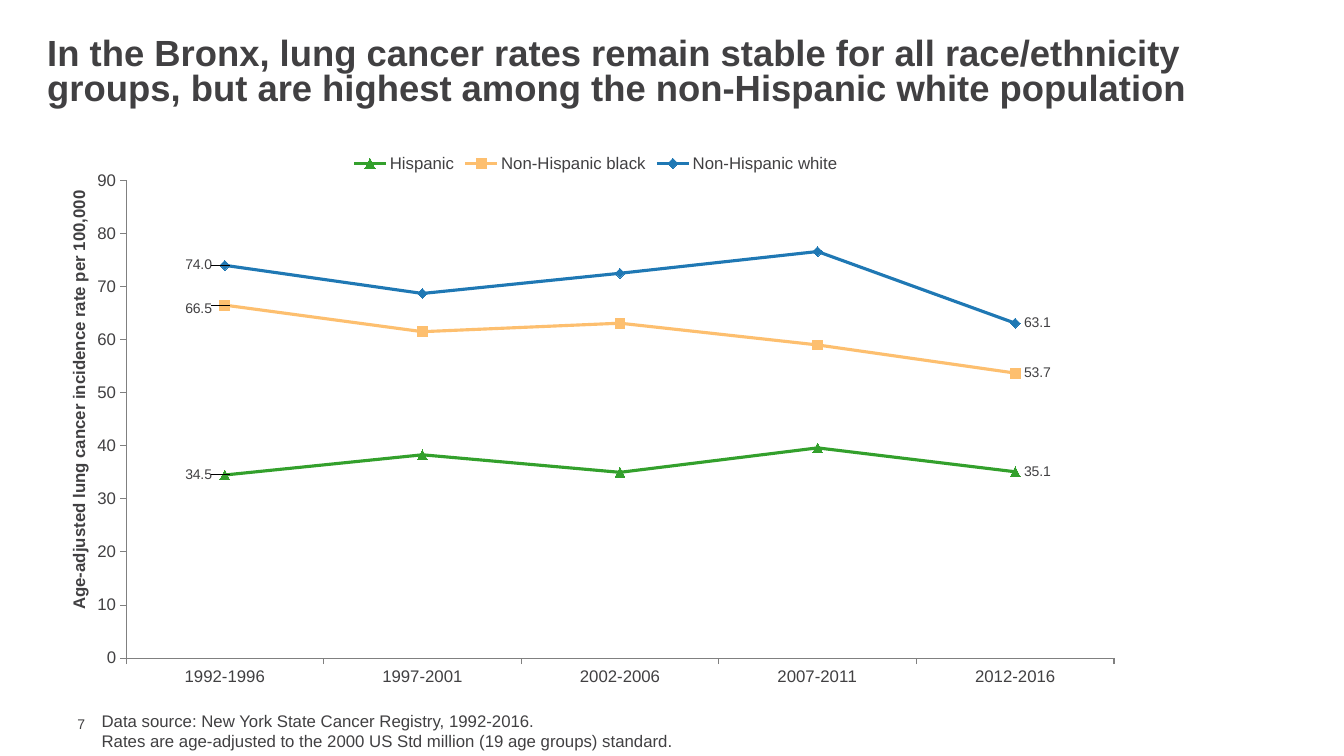
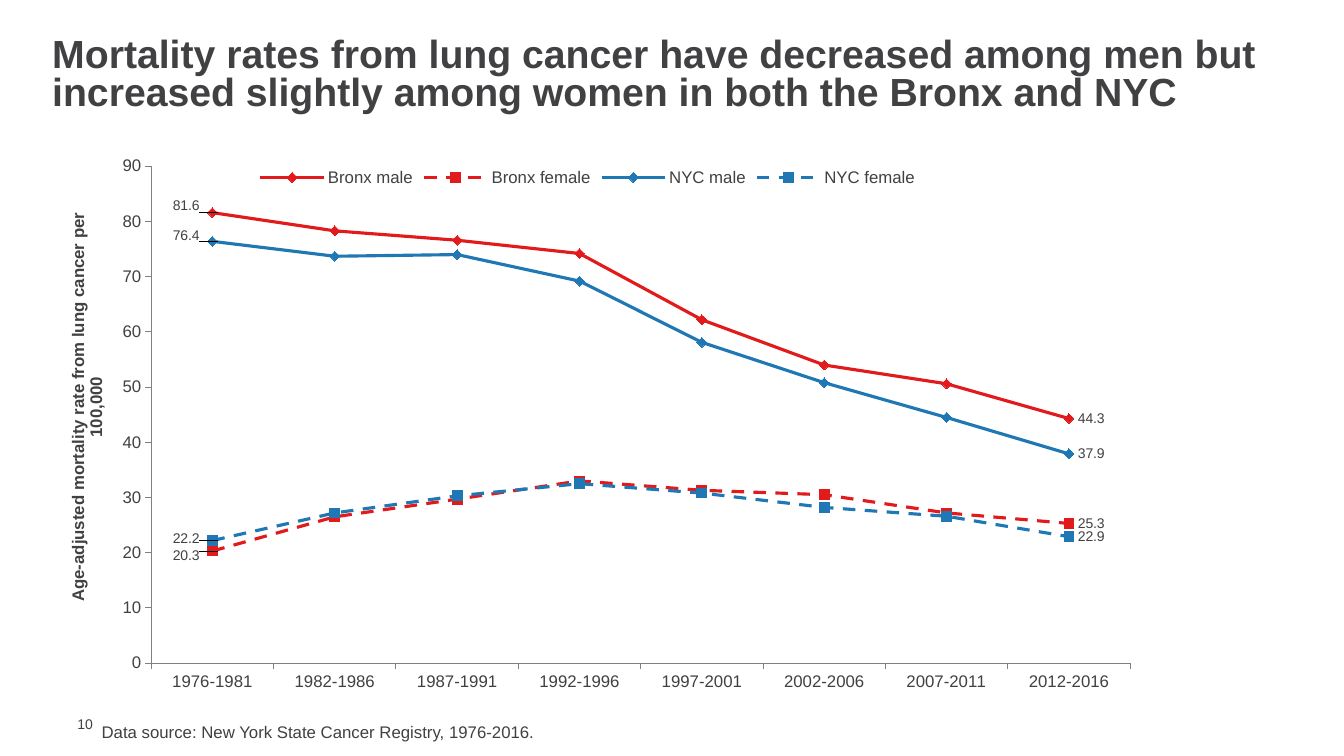
from lxml import etree
from pptx import Presentation
from pptx import util as u
from pptx.chart.data import CategoryChartData
from pptx.dml.color import RGBColor
from pptx.enum import chart as charts, dml, text
from pptx.oxml import parse_xml
from pptx.oxml.ns import nsdecls, qn

FONT = "Arial"
INK = "414042"
AXIS_GREY = "808080"
GREEN, ORANGE, BLUE, RED = "33A02C", "FDBF6F", "1F78B4", "E31A1C"
CHART_WIDTH, CHART_HEIGHT = 11, 5.58
FIRST_LABEL_SHIFT = -0.48
DIAMOND = charts.XL_MARKER_STYLE.DIAMOND
SQUARE = charts.XL_MARKER_STYLE.SQUARE
TRIANGLE = charts.XL_MARKER_STYLE.TRIANGLE
LEADER_LINES = (
    f'<c:extLst {nsdecls("c")}><c:ext uri="{{CE6537A1-D6FC-4f65-9D91-7224C49458BB}}" '
    'xmlns:c15="http://schemas.microsoft.com/office/drawing/2012/chart">'
    '<c15:showLeaderLines val="1"/></c:ext></c:extLst>')


def color(hex_code):
    return RGBColor.from_string(hex_code)


def style_font(font, size, bold=False):
    font.name, font.size, font.bold = FONT, u.Pt(size), bold
    font.color.rgb = color(INK)


def add_text(slide, place, lines, size, bold=False, spacing=None, middle=False):
    box = slide.shapes.add_textbox(*map(u.Inches, place))
    frame = box.text_frame
    frame.word_wrap = True
    if middle:
        frame.vertical_anchor = text.MSO_ANCHOR.MIDDLE
    for index, line in enumerate(lines):
        para = frame.add_paragraph() if index else frame.paragraphs[0]
        para.text = line
        style_font(para.font, size, bold)
        if spacing:
            para.line_spacing = spacing
    return frame


def add_page(deck, title, title_place, title_size, number, source, source_place):
    slide = deck.slides.add_slide(deck.slide_layouts[6])
    number_frame = add_text(slide, (0.67, 7.1, 0.43, 0.17), [number], 10, middle=True)
    number_frame.margin_top = number_frame.margin_right = number_frame.margin_bottom = 0
    add_text(slide, source_place, source, 12)
    add_text(slide, title_place, [title], title_size, True, 0.8, True)
    return slide


def set_layout(parent, index, left, top, size=None):
    """Place a chart part by hand; lengths are inches within the chart."""
    for old in parent.findall(qn("c:layout")):
        parent.remove(old)
    layout = etree.Element(qn("c:layout"))
    manual = etree.SubElement(layout, qn("c:manualLayout"))
    settings = []
    if size:
        settings.append(("layoutTarget", "inner"))
    if parent.tag != qn("c:dLbl"):
        settings += [("xMode", "edge"), ("yMode", "edge")]
    settings += [("x", left / CHART_WIDTH), ("y", top / CHART_HEIGHT)]
    if size:
        settings += [("w", size[0] / CHART_WIDTH), ("h", size[1] / CHART_HEIGHT)]
    for name, value in settings:
        etree.SubElement(manual, qn(f"c:{name}")).set("val", str(value))
    parent.insert(index, layout)


def style_axis(axis):
    axis.has_major_gridlines = False
    axis.major_tick_mark = charts.XL_TICK_MARK.OUTSIDE
    axis.minor_tick_mark = charts.XL_TICK_MARK.NONE
    style_font(axis.tick_labels.font, 12)
    axis.format.line.color.rgb = color(AXIS_GREY)
    axis.format.line.width = u.Pt(0.75)


def style_value_axis(axis, title, title_corner):
    style_axis(axis)
    axis.minimum_scale, axis.maximum_scale, axis.major_unit = 0, 90, 10
    axis.tick_labels.number_format = "0"
    axis.tick_labels.number_format_is_linked = False
    frame = axis.axis_title.text_frame
    frame.text = title
    style_font(frame.paragraphs[0].font, 12, True)
    body = frame._txBody.find(qn("a:bodyPr"))
    body.set("rot", "-5400000")
    body.set("vert", "horz")
    set_layout(axis.axis_title._element, 1, *title_corner)


def style_series(series, hex_code, marker, dashed, label_drop):
    """Colour a line and label its two ends; the first label is led to the left."""
    series.smooth = False
    line = series.format.line
    line.color.rgb = color(hex_code)
    line.width = u.Pt(2.25)
    if dashed:
        line.dash_style = dml.MSO_LINE.DASH
    series.marker.style, series.marker.size = marker, 7
    series.marker.format.fill.solid()
    series.marker.format.fill.fore_color.rgb = color(hex_code)
    series.marker.format.line.color.rgb = color(hex_code)
    labels = series.data_labels
    labels.show_value = False
    for index in (0, len(series.values) - 1):
        label = series.points[index].data_label
        style_font(label.font, 10)
        label.position = charts.XL_LABEL_POSITION.RIGHT
    dlbls = labels._element
    set_layout(dlbls.find(qn("c:dLbl")), 1, FIRST_LABEL_SHIFT, label_drop)
    dlbls.append(parse_xml(LEADER_LINES))


def add_line_chart(slide, corner, plot, axis_title, title_corner, periods, rows):
    """Rows hold name, colour, marker, dashed, drop of the first label, values."""
    data = CategoryChartData(number_format="0.0")
    data.categories = periods
    for name, *_, values in rows:
        data.add_series(name, values)
    place = map(u.Inches, (*corner, CHART_WIDTH, CHART_HEIGHT))
    chart = slide.shapes.add_chart(charts.XL_CHART_TYPE.LINE_MARKERS, *place, data).chart
    style_font(chart.font, 10)
    chart.has_title = False
    chart.has_legend = True
    chart.legend.position = charts.XL_LEGEND_POSITION.TOP
    chart.legend.include_in_layout = False
    style_font(chart.legend.font, 12)
    style_axis(chart.category_axis)
    style_value_axis(chart.value_axis, axis_title, title_corner)
    chart.plots[0].vary_by_categories = False
    for series, (_, hex_code, marker, dashed, drop, _) in zip(chart.plots[0].series, rows):
        style_series(series, hex_code, marker, dashed, drop)
    left, top, *size = plot
    set_layout(chart.element.find(".//" + qn("c:plotArea")), 0, left, top, size)


def main():
    deck = Presentation()
    deck.slide_width, deck.slide_height = u.Inches(13.33), u.Inches(7.5)
    periods = ["1976-1981", "1982-1986", "1987-1991", "1992-1996",
               "1997-2001", "2002-2006", "2007-2011", "2012-2016"]

    page = add_page(
        deck,
        "In the Bronx, lung cancer rates remain stable for all race/ethnicity groups, "
        "but are highest among the non-Hispanic white population",
        (0.37, 0.33, 12.58, 0.8), 26, "7",
        ["Data source: New York State Cancer Registry, 1992-2016.",
         "Rates are age-adjusted to the 2000 US Std million (19 age groups) standard."],
        (0.91, 7, 9.92, 0.5))
    add_line_chart(
        page, (0.41, 1.42), (0.84, 0.37, 9.8, 4.74),
        "Age-adjusted lung cancer incidence rate per 100,000", (0.24, 0.44), periods[3:],
        [("Hispanic", GREEN, TRIANGLE, False, 0, (34.5, 38.3, 35, 39.6, 35.1)),
         ("Non-Hispanic black", ORANGE, SQUARE, False, 0.04, (66.5, 61.5, 63.1, 59, 53.7)),
         ("Non-Hispanic white", BLUE, DIAMOND, False, -0.01, (74, 68.7, 72.5, 76.6, 63.1))])

    page = add_page(
        deck,
        "Mortality rates from lung cancer have decreased among men but increased "
        "slightly among women in both the Bronx and NYC",
        (0.42, 0.33, 12.5, 0.85), 28, "10",
        ["Data source: New York State Cancer Registry, 1976-2016."],
        (0.91, 7.11, 9.92, 0.3))
    add_line_chart(
        page, (0.33, 1.56), (1.17, 0.09, 9.71, 4.93),
        "Age-adjusted mortality rate from lung cancer per 100,000", (0.31, 0.52), periods,
        [("Bronx male", RED, DIAMOND, False, -0.07,
          (81.6, 78.3, 76.6, 74.2, 62.2, 54, 50.6, 44.3)),
         ("Bronx female", RED, SQUARE, True, 0.05,
          (20.3, 26.5, 29.7, 33, 31.3, 30.5, 27.2, 25.3)),
         ("NYC male", BLUE, DIAMOND, False, -0.06,
          (76.4, 73.7, 74, 69.2, 58.1, 50.8, 44.5, 37.9)),
         ("NYC female", BLUE, SQUARE, True, -0.02,
          (22.2, 27.2, 30.3, 32.5, 30.8, 28.2, 26.6, 22.9))])
    deck.save("out.pptx")


if __name__ == "__main__":
    main()
